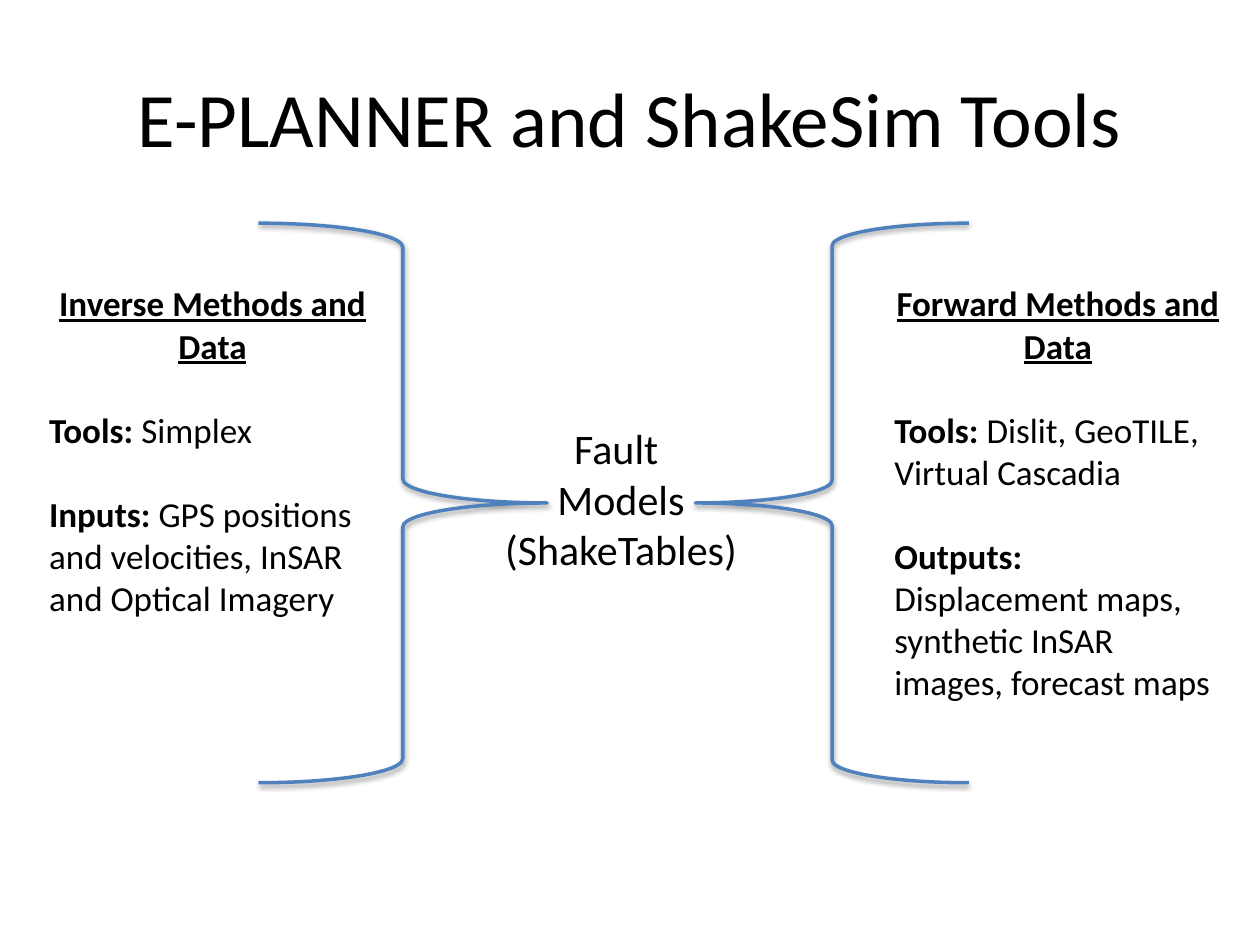
from dataclasses import dataclass

from lxml.etree import SubElement
from pptx import Presentation
from pptx.dml.color import RGBColor
from pptx.enum.shapes import MSO_SHAPE
from pptx.enum.text import MSO_ANCHOR, PP_ALIGN
from pptx.oxml.ns import qn
from pptx.slide import Slide
from pptx.text.text import TextFrame
from pptx.util import Cm, Pt


@dataclass(frozen=True)
class Theme:
    font: str = "Calibri"
    ink: RGBColor = RGBColor(0, 0, 0)
    line: RGBColor = RGBColor(0x4F, 0x81, 0xBD)
    shade: str = "000000"
    title: int = 44
    hub: int = 24
    body: int = 20
    gap: int = 24


@dataclass(frozen=True)
class Box:
    left: float
    top: float
    width: float
    height: float

    def place(self) -> tuple[Cm, Cm, Cm, Cm]:
        return Cm(self.left), Cm(self.top), Cm(self.width), Cm(self.height)


@dataclass(frozen=True)
class Brace:
    kind: MSO_SHAPE
    box: Box


@dataclass(frozen=True)
class Panel:
    box: Box
    head: str
    items: tuple[tuple[str, str], ...]


THEME = Theme()
BRACES = (
    Brace(MSO_SHAPE.LEFT_BRACE, Box(14.02, 4.5, 5.51, 11.28)),
    Brace(MSO_SHAPE.RIGHT_BRACE, Box(5.21, 4.5, 5.82, 11.28)),
)
PANELS = (
    Panel(Box(0.74, 5.56, 7.09, 7.09), "Inverse Methods and Data", (
        ("Tools:", "Simplex"),
        ("Inputs:", "GPS positions and velocities, InSAR and Optical Imagery"),
    )),
    Panel(Box(17.78, 5.56, 7.09, 8.81), "Forward Methods and Data", (
        ("Tools:", "Dislit, GeoTILE, Virtual Cascadia"),
        ("Outputs:", "Displacement maps, synthetic InSAR images, forecast maps"),
    )),
)


def add_brace(slide: Slide, brace: Brace) -> None:
    shape = slide.shapes.add_shape(brace.kind, *brace.box.place())
    shape.fill.background()
    shape.line.color.rgb = THEME.line
    shape.line.width = Pt(2)
    shape.shadow.inherit = False
    glow = SubElement(
        shape._element.spPr.find(qn("a:effectLst")), qn("a:outerShdw"),
        blurRad=str(Pt(3.1)), dist=str(Pt(1.6)), dir="5400000", rotWithShape="0",
    )
    tint = SubElement(glow, qn("a:srgbClr"), val=THEME.shade)
    SubElement(tint, qn("a:alpha"), val="38000")


def add_frame(slide: Slide, box: Box) -> TextFrame:
    frame = slide.shapes.add_textbox(*box.place()).text_frame
    frame.word_wrap = True
    return frame


def set_style(frame: TextFrame, size: int) -> None:
    for para in frame.paragraphs:
        para.font.name = THEME.font
        para.font.size = Pt(size)
        para.font.color.rgb = THEME.ink


def add_label(slide: Slide, box: Box, text: str, size: int) -> None:
    frame = add_frame(slide, box)
    frame.vertical_anchor = MSO_ANCHOR.MIDDLE
    frame.text = text
    for para in frame.paragraphs:
        para.alignment = PP_ALIGN.CENTER
    set_style(frame, size)


def add_panel(slide: Slide, panel: Panel) -> None:
    frame = add_frame(slide, panel.box)
    head = frame.paragraphs[0]
    head.text = panel.head
    head.alignment = PP_ALIGN.CENTER
    head.font.bold = head.font.underline = True
    for label, text in panel.items:
        para = frame.add_paragraph()
        para.space_before = Pt(THEME.gap)
        run = para.add_run()
        run.text = f"{label} "
        run.font.bold = True
        para.add_run().text = text
    set_style(frame, THEME.body)


def main() -> None:
    """Build the slide of fault model tools and save it."""
    deck = Presentation()
    deck.slide_width, deck.slide_height = Cm(25.4), Cm(19.05)
    slide = deck.slides.add_slide(deck.slide_layouts[6])
    for brace in BRACES:
        add_brace(slide, brace)
    add_label(slide, Box(9.75, 8.38, 5.54, 3.33), "Fault \nModels\n(ShakeTables)", THEME.hub)
    for panel in PANELS:
        add_panel(slide, panel)
    add_label(slide, Box(1.27, 0.76, 22.86, 3.18), "E-PLANNER and ShakeSim Tools", THEME.title)
    deck.save("out.pptx")


if __name__ == "__main__":
    main()
